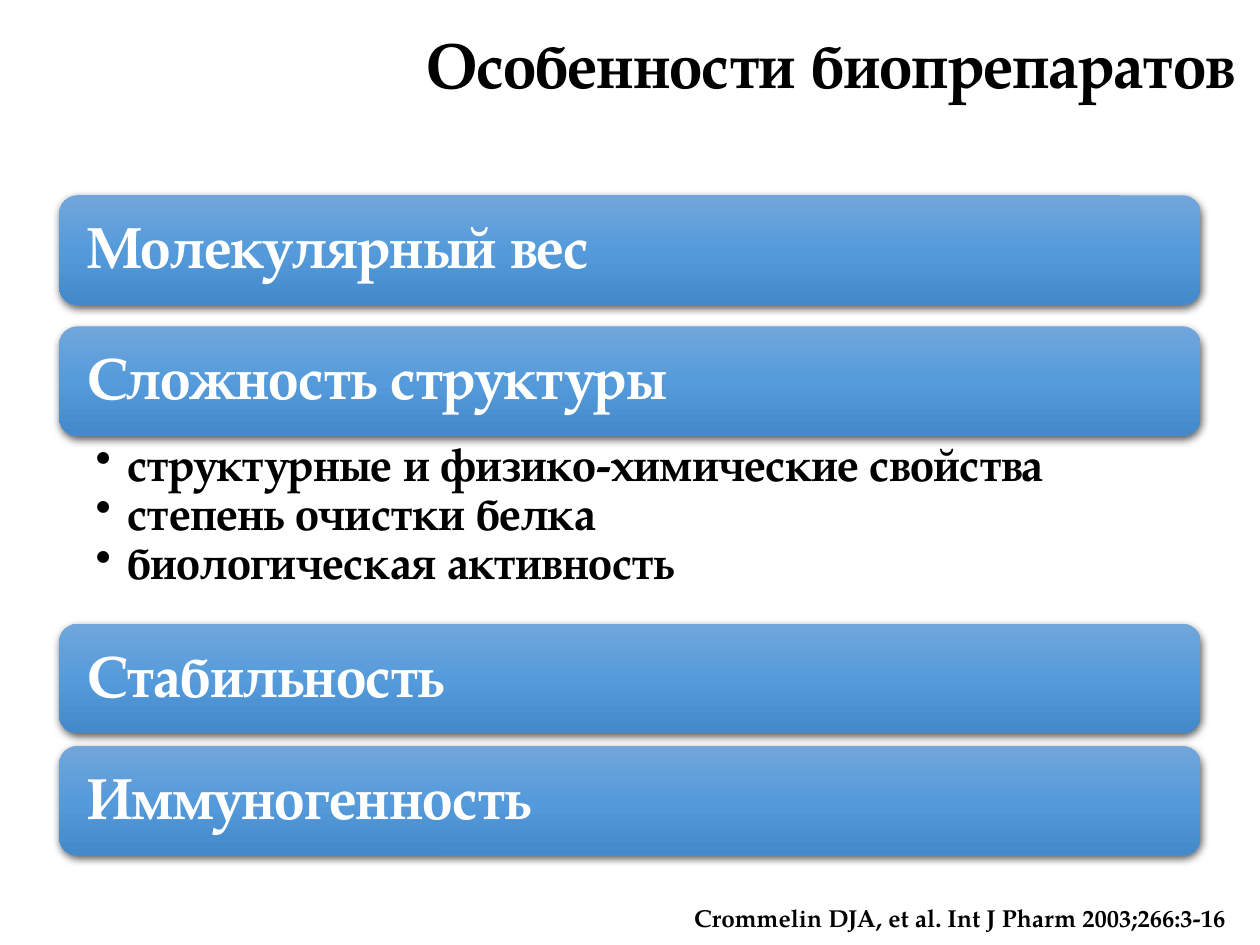
"""Build the slide on the features of biological drugs."""
from lxml.etree import SubElement as Sub
from pptx import Presentation
from pptx.dml.color import RGBColor as RGB
from pptx.enum.shapes import MSO_SHAPE as Shape
from pptx.enum.text import MSO_ANCHOR as Anchor, MSO_AUTO_SIZE as Fit, PP_ALIGN as Align
from pptx.oxml.ns import qn
from pptx.util import Inches, Pt

TITLE = "Особенности биопрепаратов"
SOURCE = "Crommelin DJA, et al. Int J Pharm 2003;266:3-16"
TOPICS = [
    ("Молекулярный вес", [], 0.17),
    ("Сложность структуры", [
        "структурные и физико-химические свойства",
        "степень очистки белка",
        "биологическая активность",
    ], 0),
    ("Стабильность", [], 0.1),
    ("Иммуногенность", [], 0),
]
COLORS = {"ink": "000000", "label": "FFFFFF",
          "top": "71A6DB", "middle": "559BDB", "bottom": "448ACA"}
FONT = "TeX Gyre Pagella"
WIDE, HIGH = 10, 7.5
EDGE, START = 0.47, 1.55
SPAN = WIDE - 2 * EDGE
BAR, LIST = 0.87, 1.49


def write(shape, lines, size, color, pads, align=Align.LEFT, space=1.0):
    frame = shape.text_frame
    frame.word_wrap = True
    (frame.margin_left, frame.margin_top,
     frame.margin_right, frame.margin_bottom) = map(Inches, pads)
    frame.text = "\n".join(lines)
    for para in frame.paragraphs:
        para.alignment = align
        para.line_spacing = space
        for run in para.runs:
            font = run.font
            font.name, font.size, font.bold = FONT, Pt(size), True
            font.color.rgb = RGB.from_string(COLORS[color])
    return frame


def add_box(slide, place, *text, **style):
    box = slide.shapes.add_textbox(*map(Inches, place))
    return write(box, *text, **style)


def add_color(node, value):
    return Sub(node, qn("a:srgbClr"), val=value)


def shade(bar):
    bar.line.fill.background()
    bar.fill.gradient()
    bar.fill.gradient_angle = 270
    props = bar.fill._xPr
    stops = props.find(".//" + qn("a:gsLst"))
    stops.clear()
    for share, name in enumerate(("top", "middle", "bottom")):
        stop = Sub(stops, qn("a:gs"), pos=str(share * 50000))
        add_color(stop, COLORS[name])
    bar.shadow.inherit = False
    glow = Sub(props.find(qn("a:effectLst")), qn("a:outerShdw"),
               blurRad=str(Pt(4.5)), dist=str(Pt(1.5)), dir="5400000",
               algn="ctr", rotWithShape="0")
    Sub(add_color(glow, COLORS["ink"]), qn("a:alpha"), val="63000")


def add_bar(slide, top, label):
    bar = slide.shapes.add_shape(
        Shape.ROUNDED_RECTANGLE, *map(Inches, (EDGE, top, SPAN, BAR)))
    shade(bar)
    frame = write(bar, [label], 33, "label", [0.18, 0.14, 0.18, 0.14], space=0.9)
    frame.vertical_anchor = Anchor.MIDDLE


def add_list(slide, top, items):
    frame = add_box(slide, (EDGE, top, SPAN, LIST), items, 26, "ink",
                    (0.29, 0.05, 0.26, 0.05), space=0.9)
    for para in frame.paragraphs:
        props = para._p.get_or_add_pPr()
        props.set("marL", str(Inches(0.25)))
        props.set("indent", str(-Inches(0.25)))
        Sub(props, qn("a:buChar"), char="•")


def main():
    deck = Presentation()
    deck.slide_width, deck.slide_height = Inches(WIDE), Inches(HIGH)
    slide = deck.slides.add_slide(deck.slide_layouts[6])
    head = add_box(slide, (0, 0, WIDE, 0.86), [TITLE], 36, "ink",
                   (0.2, 0.2, 0.05, 0.05), align=Align.RIGHT)
    head.margin_right = Inches(0.2)
    top = START
    for label, items, gap in TOPICS:
        add_bar(slide, top, label)
        top += BAR + gap
        if items:
            add_list(slide, top, items)
            top += LIST
    foot = add_box(slide, (5.41, 7.12, 5.28, 0.34), [SOURCE], 14, "ink",
                   (0.1, 0.05, 0.1, 0.05))
    head.auto_size = foot.auto_size = Fit.SHAPE_TO_FIT_TEXT
    deck.save("out.pptx")


if __name__ == "__main__":
    main()
